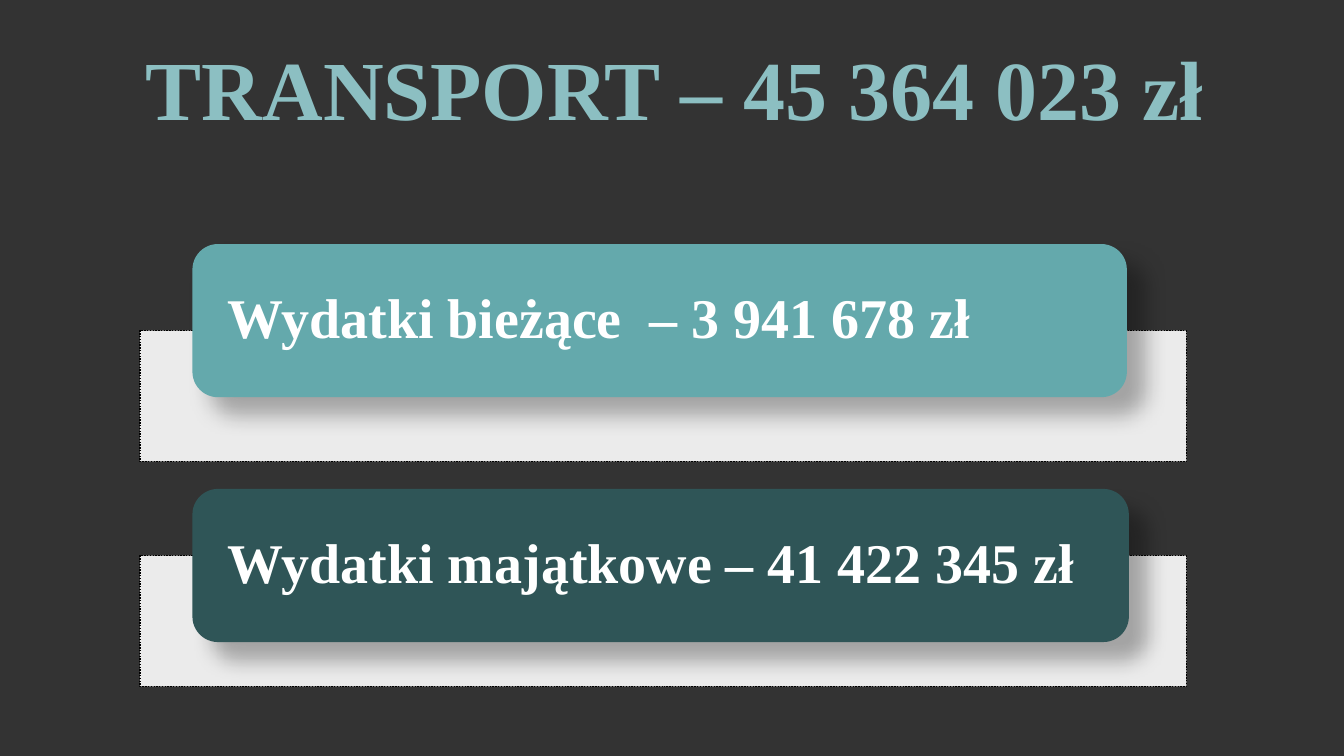
from dataclasses import dataclass

from lxml.etree import SubElement
from pptx import Presentation
from pptx.dml.color import RGBColor
from pptx.enum.dml import MSO_LINE
from pptx.enum.shapes import MSO_SHAPE as Kind
from pptx.enum.text import MSO_ANCHOR as Anchor, PP_ALIGN as Align
from pptx.oxml.ns import qn
from pptx.shapes.autoshape import Shape
from pptx.slide import Slide
from pptx.util import Cm, Pt

FONT = "Times New Roman"
HUES = {
    "back": "333333",
    "title": "8CBFC2",
    "white": "FFFFFF",
    "black": "000000",
    "teal": "64A9AC",
    "deep": "2F5557",
}


@dataclass
class Item:
    text: str
    hue: str
    panel: float
    top: float
    width: float


ITEMS = [
    Item("Wydatki bieżące  – 3 941 678 zł", "teal", 8.33, 6.15, 23.55),
    Item("Wydatki majątkowe – 41 422 345 zł", "deep", 14, 12.32, 23.6),
]


def color(name: str) -> RGBColor:
    return RGBColor.from_string(HUES[name])


def write(shape: Shape, text: str, size: float, hue: str, align: Align) -> None:
    frame = shape.text_frame
    frame.word_wrap = True
    frame.text = text
    para = frame.paragraphs[0]
    para.alignment = align
    para.line_spacing = 0.9
    font = para.runs[0].font
    font.name, font.size, font.bold = FONT, Pt(size), True
    font.color.rgb = color(hue)


def add_alpha(node, share: int) -> None:
    """Set the opacity of a colour element, in percent."""
    SubElement(node, qn("a:alpha"), val=str(share * 1000))


def add_shadow(shape: Shape) -> None:
    shape.shadow.inherit = False
    effects = shape.element.spPr.find(qn("a:effectLst"))
    outer = SubElement(effects, qn("a:outerShdw"), blurRad=str(Pt(15)),
                       dist=str(Pt(18)), dir=str(45 * 60000),
                       algn="tl", rotWithShape="0")
    tint = SubElement(outer, qn("a:srgbClr"), val=HUES["black"])
    add_alpha(tint, 30)


def add_panel(slide: Slide, top: float) -> None:
    panel = slide.shapes.add_shape(Kind.RECTANGLE, Cm(3.53), Cm(top),
                                   Cm(26.37), Cm(3.3))
    panel.shadow.inherit = False
    panel.fill.solid()
    panel.fill.fore_color.rgb = color("white")
    add_alpha(panel.element.spPr.find(qn("a:solidFill"))[0], 90)
    panel.line.color.rgb = color("black")
    panel.line.width = Pt(1)
    panel.line.dash_style = MSO_LINE.ROUND_DOT


def add_item(slide: Slide, item: Item) -> None:
    """Draw a panel with its labelled bar on top."""
    add_panel(slide, item.panel)
    bar = slide.shapes.add_shape(Kind.ROUNDED_RECTANGLE, Cm(4.85),
                                 Cm(item.top), Cm(item.width), Cm(3.86))
    bar.fill.solid()
    bar.fill.fore_color.rgb = color(item.hue)
    bar.line.fill.background()
    add_shadow(bar)
    frame = bar.text_frame
    frame.margin_left = frame.margin_right = Cm(0.7)
    frame.margin_top = frame.margin_bottom = 0
    frame.vertical_anchor = Anchor.MIDDLE
    write(bar, item.text, 40, "white", Align.LEFT)


def main() -> None:
    deck = Presentation()
    deck.slide_width, deck.slide_height = Cm(33.87), Cm(19.05)
    slide = deck.slides.add_slide(deck.slide_layouts[6])
    slide.background.fill.solid()
    slide.background.fill.fore_color.rgb = color("back")
    for item in ITEMS:
        add_item(slide, item)
    title = slide.shapes.add_textbox(Cm(0.15), Cm(1.09), Cm(33.7), Cm(2.7))
    write(title, "TRANSPORT – 45 364 023 zł", 60, "title", Align.CENTER)
    deck.save("out.pptx")


if __name__ == "__main__":
    main()
